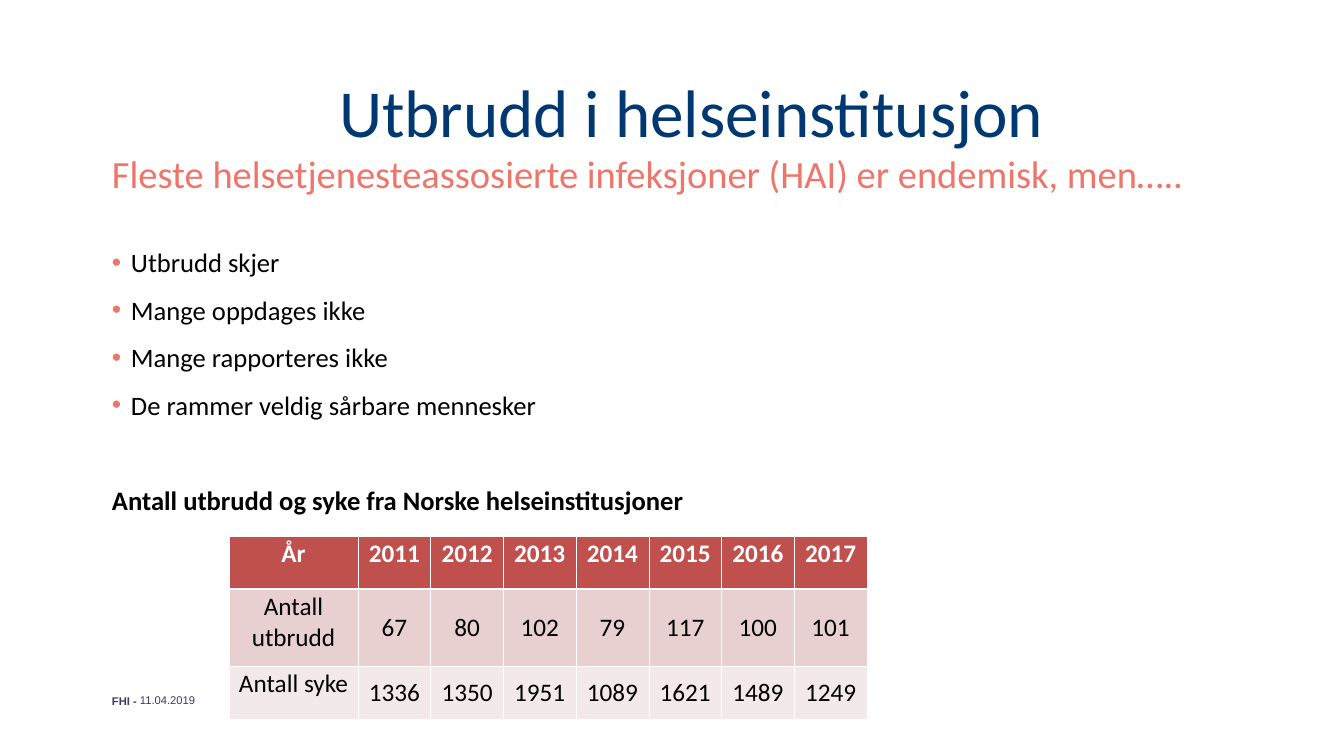
from lxml import etree
from pptx import Presentation
from pptx import util as u
from pptx.dml.color import RGBColor
from pptx.enum import text
from pptx.oxml import ns

NAVY = RGBColor(0x00, 0x38, 0x71)
CORAL = RGBColor(0xEE, 0x75, 0x6A)
SLATE = RGBColor(0x3A, 0x3B, 0x63)
BLACK = RGBColor(0x00, 0x00, 0x00)
WHITE = RGBColor(0xFF, 0xFF, 0xFF)
RED = RGBColor(0xC0, 0x50, 0x4D)
ROSE = RGBColor(0xE8, 0xD0, 0xD0)
BLUSH = RGBColor(0xF4, 0xE9, 0xE9)

TITLE = "Utbrudd i helseinstitusjon"
LEAD = "Fleste helsetjenesteassosierte infeksjoner (HAI) er endemisk, men….."
POINTS = [
    "Utbrudd skjer",
    "Mange oppdages ikke",
    "Mange rapporteres ikke",
    "De rammer veldig sårbare mennesker",
]
HEADING = "Antall utbrudd og syke fra Norske helseinstitusjoner"
OWNER, DATE = "FHI -", "11.04.2019"
ROWS = [
    ["År", 2011, 2012, 2013, 2014, 2015, 2016, 2017],
    ["Antall utbrudd", 67, 80, 102, 79, 117, 100, 101],
    ["Antall syke", 1336, 1350, 1951, 1089, 1621, 1489, 1249],
]
HEIGHTS = [53, 77, 53]
FILLS = [RED, ROSE, BLUSH]
LEFT, WIDTH = 112, 1159
GRID_X, GRID_Y, GRID_W, LABEL_W = 229, 536, 638, 129
INDENT = 19

CENTER = text.PP_ALIGN.CENTER
MIDDLE = text.MSO_ANCHOR.MIDDLE


def px(n):
    return u.Emu(round(n * 914400 / 50.4))


def style(para, words, font, **form):
    para.text = words
    for key, val in form.items():
        setattr(para, key, val)
    size, color, bold, name = font
    look = {"size": u.Pt(size), "bold": bold, "name": name}
    for key, val in look.items():
        setattr(para.font, key, val)
    para.font.color.rgb = color


def box(slide, x, y, w, h, inset=0):
    frame = slide.shapes.add_textbox(*map(px, (x, y, w, h))).text_frame
    frame.word_wrap = True
    for side in ("left", "right", "top", "bottom"):
        setattr(frame, "margin_" + side, px(inset))
    return frame


def bullet(para):
    props = para._p.get_or_add_pPr()
    props.set("marL", str(px(INDENT)))
    props.set("indent", str(-px(INDENT)))
    tint = etree.SubElement(props, ns.qn("a:buClr"))
    etree.SubElement(tint, ns.qn("a:srgbClr"), val=str(CORAL))
    etree.SubElement(props, ns.qn("a:buFont"), typeface="Arial")
    etree.SubElement(props, ns.qn("a:buChar"), char="•")


def border(cell, row):
    props = cell._tc.get_or_add_tcPr()
    widths = {"L": 1, "R": 1, "T": 3 if row == 1 else 1, "B": 3 if row == 0 else 1}
    for side, width in widths.items():
        line = etree.SubElement(props, ns.qn("a:ln" + side), w=str(u.Pt(width)))
        fill = etree.SubElement(line, ns.qn("a:solidFill"))
        etree.SubElement(fill, ns.qn("a:srgbClr"), val=str(WHITE))


def points(slide):
    frame = box(slide, LEFT, 240, WIDTH, 401)
    form = {"line_spacing": 1.2, "space_after": u.Pt(13)}
    for i, words in enumerate(POINTS):
        para = frame.add_paragraph() if i else frame.paragraphs[0]
        bullet(para)
        style(para, words, (38, BLACK, False, "Calibri"), **form)
    style(frame.add_paragraph(), HEADING, (38, BLACK, True, "Calibri"),
          space_before=u.Pt(68), **form)


def grid(slide):
    count = len(ROWS[0])
    table = slide.shapes.add_table(
        len(ROWS), count, px(GRID_X), px(GRID_Y), px(GRID_W), px(sum(HEIGHTS))).table
    year_w = (GRID_W - LABEL_W) / (count - 1)
    for c, col in enumerate(table.columns):
        col.width = px(year_w if c else LABEL_W)
    for r, (values, high, fill) in enumerate(zip(ROWS, HEIGHTS, FILLS)):
        table.rows[r].height = px(high)
        font = (36, BLACK if r else WHITE, r == 0, "Calibri")
        for c, value in enumerate(values):
            cell = table.cell(r, c)
            border(cell, r)
            cell.fill.solid()
            cell.fill.fore_color.rgb = fill
            if r and c:
                cell.vertical_anchor = MIDDLE
            style(cell.text_frame.paragraphs[0], str(value), font, alignment=CENTER)


def main():
    deck = Presentation()
    deck.slide_width, deck.slide_height = px(1344), px(756)
    slide = deck.slides.add_slide(deck.slide_layouts[6])
    owner = box(slide, LEFT, 694, 150, 14)
    style(owner.paragraphs[0], OWNER, (16, SLATE, True, "Arial"))
    points(slide)
    date = box(slide, 135, 692, 256, 16, 5)
    date.vertical_anchor = MIDDLE
    style(date.paragraphs[0], DATE, (16, SLATE, False, "Arial"))
    title = box(slide, LEFT, 79, WIDTH, 144)
    style(title.paragraphs[0], TITLE, (96, NAVY, False, "Calibri"),
          alignment=CENTER, line_spacing=0.9)
    lead = box(slide, LEFT, 150, WIDTH, 93)
    style(lead.paragraphs[0], LEAD, (55, CORAL, False, "Calibri"))
    grid(slide)
    deck.save("out.pptx")


if __name__ == "__main__":
    main()
